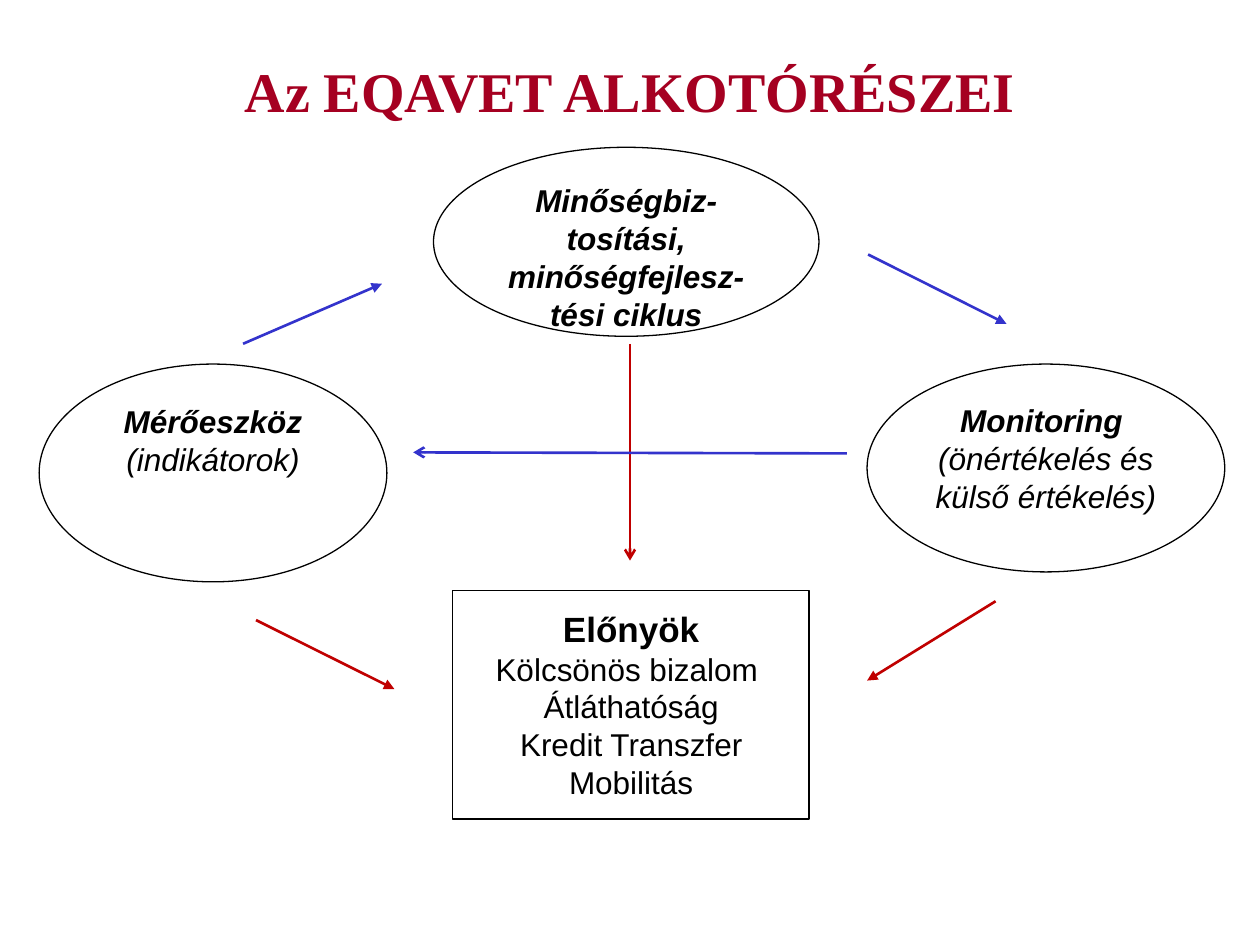
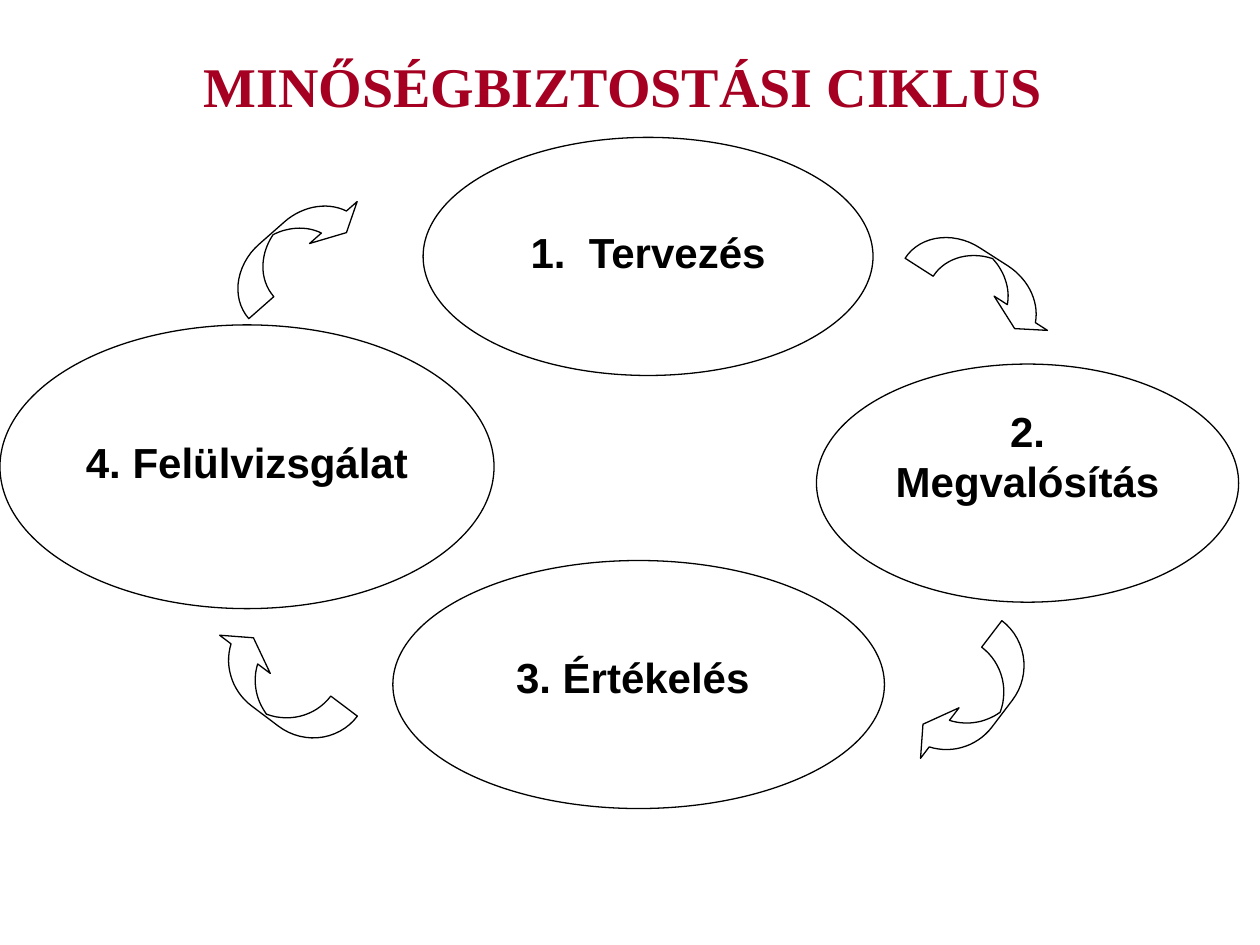
from math import asin, cos, degrees, radians, sin

from lxml.etree import SubElement
from pptx import Presentation
from pptx.dml.color import RGBColor
from pptx.enum.shapes import MSO_CONNECTOR, MSO_SHAPE
from pptx.enum.text import MSO_ANCHOR, MSO_AUTO_SIZE, PP_ALIGN
from pptx.oxml.ns import qn
from pptx.util import Cm, Pt

COLORS = {"title": "A50021", "text": "000000", "outline": "000000",
          "fill": "FFFFFF", "cycle": "3333CC", "benefit": "C00000"}
SLIDE_WIDTH, SLIDE_HEIGHT = 25.4, 19.05


def write(frame, *lines, font="Arial", size=18, color="text", bold=True, italic=False,
          first_size=None, rest_bold=False, anchor=MSO_ANCHOR.TOP, top_inset=0.13):
    """Fill a text frame; the first line may differ in size and weight from the rest."""
    frame.word_wrap = True
    frame.auto_size = MSO_AUTO_SIZE.NONE
    frame.vertical_anchor = anchor
    frame.margin_top = Cm(top_inset)
    for number, line in enumerate(lines):
        paragraph = frame.add_paragraph() if number else frame.paragraphs[0]
        paragraph.alignment = PP_ALIGN.CENTER
        run = paragraph.add_run()
        run.text = line
        run.font.name = font
        run.font.size = Pt(size if number or not first_size else first_size)
        run.font.bold = rest_bold if number else bold
        run.font.italic = italic
        run.font.color.rgb = RGBColor.from_string(COLORS[color])


def paint(shape, opacity=100):
    """Give a shape the shared white fill and thin black outline."""
    shape.shadow.inherit = False
    shape.fill.solid()
    shape.fill.fore_color.rgb = RGBColor.from_string(COLORS["fill"])
    shape.line.color.rgb = RGBColor.from_string(COLORS["outline"])
    shape.line.width = Pt(0.75)
    if opacity < 100:
        fill_color = shape._element.spPr.find(qn("a:solidFill"))[0]
        SubElement(fill_color, qn("a:alpha")).set("val", str(opacity * 1000))


deck = Presentation()
deck.slide_width, deck.slide_height = Cm(SLIDE_WIDTH), Cm(SLIDE_HEIGHT)

# Slides with their titles
slides = []
for heading, top, height in [("Az EQAVET ALKOTÓRÉSZEI", 0.71, 2.21),
                             ("MINŐSÉGBIZTOSTÁSI CIKLUS ", 0.41, 2.59)]:
    slide = deck.slides.add_slide(deck.slide_layouts[5])
    title = slide.shapes.title
    title.left, title.top = Cm(0), Cm(top)
    title.width, title.height = Cm(SLIDE_WIDTH), Cm(height)
    write(title.text_frame, heading, font="Times New Roman", size=32,
          color="title", anchor=MSO_ANCHOR.MIDDLE)
    slides.append(slide)
components, cycle = slides

# Components: the three building blocks
for box, lines in [
    ((0.79, 7.34, 7.01, 4.39), ["Mérőeszköz", "(indikátorok)"]),
    ((17.48, 7.34, 7.21, 4.19), ["Monitoring ", "(önértékelés és külső értékelés)"]),
    ((8.74, 2.97, 7.77, 3.81), ["Minőségbiz-tosítási, minőségfejlesz-tési ciklus"]),
]:
    block = components.shapes.add_shape(MSO_SHAPE.OVAL, *map(Cm, box))
    paint(block, opacity=50)
    write(block.text_frame, *lines, italic=True)

# Components: the benefits
benefits_frame = components.shapes.add_shape(
    MSO_SHAPE.RECTANGLE, Cm(9.12), Cm(11.91), Cm(7.19), Cm(4.6))
paint(benefits_frame)
benefits = components.shapes.add_textbox(Cm(9.32), Cm(12.12), Cm(6.81), Cm(4.17))
write(benefits.text_frame, "Előnyök", "Kölcsönös bizalom ", "Átláthatóság",
      "Kredit Transzfer", "Mobilitás", first_size=20)

# Components: arrows between the blocks and towards the benefits
for ends, color, head in [
    ((4.9, 6.93, 7.7, 5.72), "cycle", "triangle"),
    ((17.5, 5.13, 20.29, 6.53), "cycle", "triangle"),
    ((20.07, 12.12, 17.48, 13.72), "benefit", "triangle"),
    ((12.7, 6.93, 12.7, 11.3), "benefit", "arrow"),
    ((17.07, 9.14, 8.33, 9.12), "cycle", "arrow"),
    ((5.16, 12.5, 7.95, 13.89), "benefit", "triangle"),
]:
    arrow = components.shapes.add_connector(MSO_CONNECTOR.STRAIGHT, *map(Cm, ends))
    arrow.line.color.rgb = RGBColor.from_string(COLORS[color])
    arrow.line.width = Pt(1.5)
    properties = arrow._element.spPr
    SubElement(properties.find(qn("a:ln")), qn("a:tailEnd")).set("type", head)
    SubElement(properties, qn("a:effectLst"))

# Cycle: the four steps
for box, step, top_inset in [
    ((0, 6.55, 9.96, 5.72), "4. Felülvizsgálat", 1.42),
    ((7.92, 11.3, 9.91, 5), "3. Értékelés ", 1.1),
    ((16.46, 7.34, 8.51, 4.8), "2. Megvalósítás ", 0.13),
    ((8.53, 2.77, 9.07, 4.8), "1.  Tervezés", 1.1),
]:
    stage = cycle.shapes.add_shape(MSO_SHAPE.OVAL, *map(Cm, box))
    paint(stage, opacity=50)
    write(stage.text_frame, step, size=24, top_inset=top_inset)

# Cycle: outline of a curved arrow in a unit box, from elliptical arcs and a head
LEFT_CENTER, RIGHT_CENTER, RADIUS, HEAD_TOP = 0.36, 0.57, 0.36, 0.67
head_angle = degrees(asin(1 - HEAD_TOP))
cross_angle = 73
arcs = []
for center, start, end in [(LEFT_CENTER, 180, 90),
                           (RIGHT_CENTER, 90, head_angle),
                           (LEFT_CENTER, head_angle, cross_angle),
                           (RIGHT_CENTER, 180 - cross_angle, 180)]:
    angles = [radians(start + (end - start) * step / 15) for step in range(16)]
    arcs.append([(center + RADIUS * cos(a), 1 - sin(a)) for a in angles])
head_outline = [(1, HEAD_TOP), (0.82, 1), (0.6, HEAD_TOP)]
curved_outline = arcs[0] + arcs[1] + head_outline + arcs[2] + arcs[3]

# Cycle: curved arrows from step to step
ARROW_LENGTH = 3.2
for left, top, height, rotation in [(4.29, 4.5, 0.99, 318.6), (18.26, 5.16, 0.99, 32.7),
                                    (3.99, 13.36, 1.12, 217), (18.08, 13.56, 1.14, 127.3)]:
    points = [(Cm(left + x * ARROW_LENGTH), Cm(top + y * height)) for x, y in curved_outline]
    builder = cycle.shapes.build_freeform(*points[0])
    builder.add_line_segments(points[1:], close=True)
    turn = builder.convert_to_shape()
    turn.rotation = rotation
    paint(turn)

deck.save("out.pptx")
